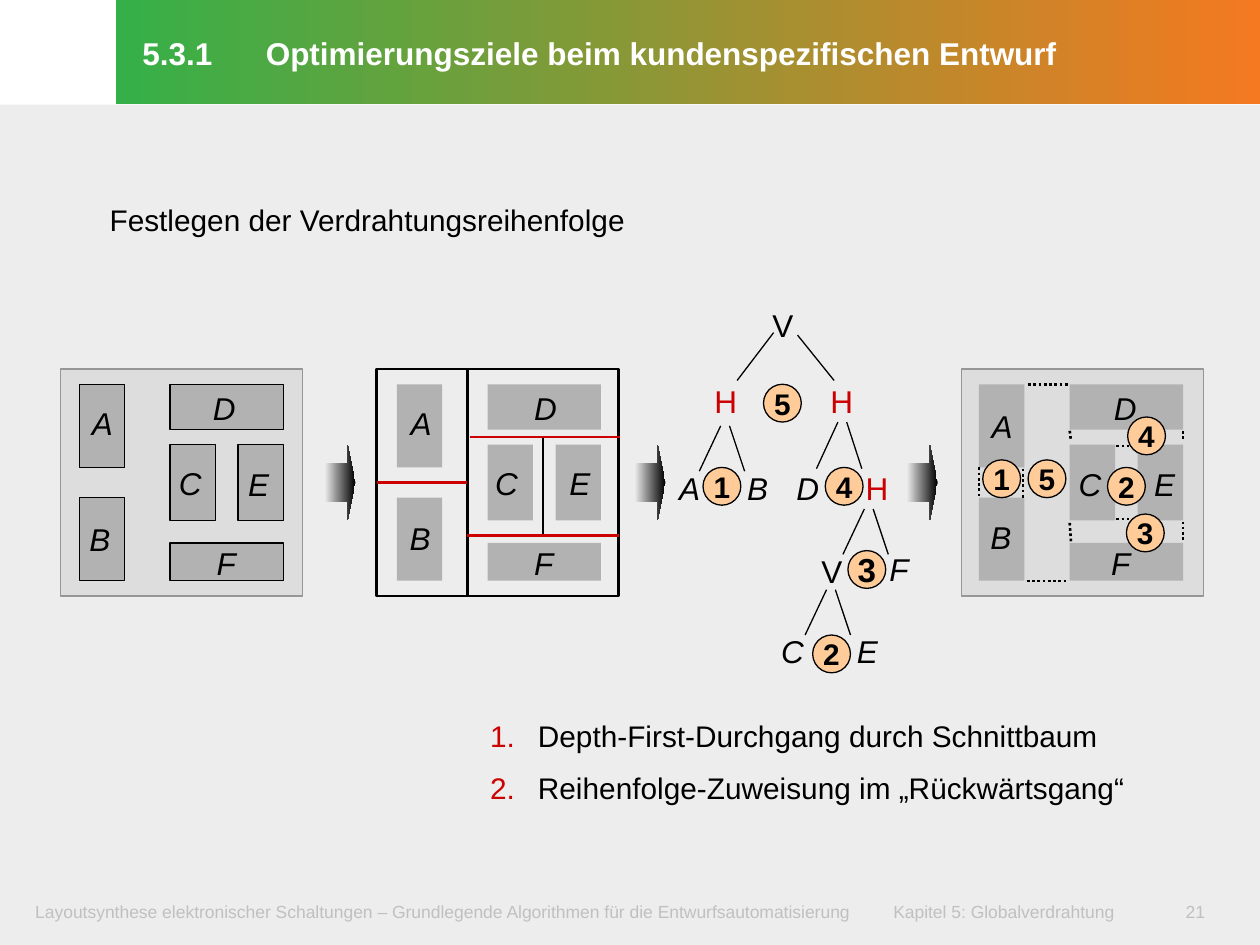
from lxml.etree import SubElement
from pptx import Presentation
from pptx.dml.color import RGBColor
from pptx.enum.dml import MSO_LINE_DASH_STYLE as Dash
from pptx.enum.shapes import MSO_CONNECTOR as Connector, MSO_SHAPE as Shape
from pptx.enum.text import MSO_ANCHOR as Anchor, PP_ALIGN as Align
from pptx.oxml.ns import qn
from pptx.util import Inches, Pt

COLOURS = {
    "page": "EDEDED", "panel": "DDDDDD", "panel_edge": "969696", "cell": "B2B2B2",
    "black": "000000", "white": "FFFFFF", "red": "CC0000", "circle": "FFCC99",
    "footer": "C0C0C0", "green": "35B048", "orange": "F47920", "pale": "EAEAEA",
}
COLOURS = {name: RGBColor.from_string(value) for name, value in COLOURS.items()}

deck = Presentation()
deck.slide_width, deck.slide_height = Inches(10), Inches(7.5)
page = deck.slides.add_slide(deck.slide_layouts[6])


def add_block(kind, place, fill=None, edge=None, weight=0.75):
    """Add a preset shape; a pair of fill colours makes a left-to-right gradient."""
    block = page.shapes.add_shape(kind, *map(Inches, place))
    block.shadow.inherit = False
    if isinstance(fill, tuple):
        block.fill.gradient()
        block.fill.gradient_angle = 0
        for stop, position, name in zip(block.fill.gradient_stops, (0, 1), fill):
            stop.position, stop.color.rgb = position, COLOURS[name]
    elif fill:
        block.fill.solid()
        block.fill.fore_color.rgb = COLOURS[fill]
    else:
        block.fill.background()
    if edge:
        block.line.color.rgb = COLOURS[edge]
        block.line.width = Pt(weight)
    else:
        block.line.fill.background()
    return block


def write(box, text, size, colour="black", margins=(0.11, 0.05, 0.11, 0.05),
          wrap=False, anchor=Anchor.TOP, align=Align.LEFT, tab=None, **font):
    """Fill the first paragraph of a box and return it."""
    frame = box.text_frame
    layout = {"word_wrap": wrap, "vertical_anchor": anchor}
    sides = ("margin_left", "margin_top", "margin_right", "margin_bottom")
    layout.update(zip(sides, map(Inches, margins)))
    for name, value in layout.items():
        setattr(frame, name, value)
    para = frame.paragraphs[0]
    para.alignment = align
    if tab:
        tabs = SubElement(para._p.get_or_add_pPr(), qn("a:tabLst"))
        SubElement(tabs, qn("a:tab"), pos=str(Inches(tab)), algn="l")
    span = para.add_run()
    span.text = text
    for name, value in {"name": "Arial", "size": Pt(size), **font}.items():
        setattr(span.font, name, value)
    span.font.color.rgb = COLOURS[colour]
    return para


# Page background, footer and title bar
add_block(Shape.RECTANGLE, (0, 0.83, 10, 6.67), "page")
footers = [
    (0.16, 9.1, "Layoutsynthese elektronischer Schaltungen – Grundlegende Algorithmen "
                "für die Entwurfsautomatisierung\tKapitel 5: Globalverdrahtung"),
    (9.29, 0.59, "21"),
]
for left, width, text in footers:
    box = page.shapes.add_textbox(*map(Inches, (left, 7.09, width, 0.32)))
    write(box, text, 10, "footer", (0.12, 0.06, 0.12, 0.06), wrap=True, tab=6.81)

bar = add_block(Shape.RECTANGLE, (0.92, 0, 9.08, 0.83), ("green", "orange"))
title = write(bar, "5.3.1\tOptimierungsziele beim kundenspezifischen Entwurf", 18, "white",
              (0.21, 0.05, 0.1, 0.07), wrap=True, anchor=Anchor.MIDDLE, tab=0.98, bold=True)
title.line_spacing = Pt(23.5)

box = page.shapes.add_textbox(*map(Inches, (0.66, 1.55, 4.41, 0.41)))
write(box, "Festlegen der Verdrahtungsreihenfolge", 17, margins=(0.21, 0.05, 0.1, 0.07))

# Three floorplans with the same six cells
for left in (0.48, 7.63):
    add_block(Shape.RECTANGLE, (left, 2.93, 1.92, 1.8), "panel", "panel_edge")
cells = [  # offset from the floorplan, top, width, height
    (0, 3.05, 0.36, 0.66), (0, 3.95, 0.36, 0.66),
    (0.72, 3.53, 0.36, 0.6), (1.26, 3.53, 0.36, 0.6),
    (0.72, 3.05, 0.9, 0.36), (0.72, 4.31, 0.9, 0.3),
]
for start, edge in ((0.63, "black"), (3.15, None), (7.77, None)):
    for offset, *rest in cells:
        add_block(Shape.RECTANGLE, (start + offset, *rest), "cell", edge)

# Regions of the cut floorplan
add_block(Shape.RECTANGLE, (3.71, 2.93, 1.2, 1.8), None, "black", 1.25)
add_block(Shape.RECTANGLE, (2.99, 2.93, 0.72, 1.8), None, "black", 1.5)

# Cut lines, tree branches and dotted channels
line_groups = [
    ("black", 1.25, None, [(4.31, 3.47, 4.31, 4.25)]),
    ("red", 1.25, None, [(3.73, 3.47, 4.92, 3.47), (3.71, 4.25, 4.91, 4.25)]),
    ("red", 1.5, None, [(2.99, 3.83, 3.71, 3.83)]),
    ("black", 0.75, None, [
        (6.14, 2.64, 5.85, 3.02), (6.33, 2.66, 6.62, 3.02),
        (5.72, 3.38, 5.55, 3.74), (5.79, 3.38, 5.91, 3.74),
        (6.65, 3.35, 6.48, 3.72), (6.72, 3.35, 6.84, 3.72),
        (6.86, 4.04, 6.69, 4.4), (6.93, 4.04, 7.05, 4.4),
        (6.56, 4.68, 6.39, 5.04), (6.63, 4.68, 6.75, 5.04)]),
    ("black", 1.5, Dash.ROUND_DOT, [
        (7.77, 3.71, 7.77, 3.95), (8.12, 3.72, 8.12, 3.96),
        (8.49, 4.15, 8.5, 4.3), (9.39, 4.14, 9.39, 4.29),
        (8.49, 3.42, 8.5, 3.5), (9.39, 3.42, 9.39, 3.5),
        (8.15, 4.61, 8.47, 4.61), (8.16, 3.05, 8.48, 3.05),
        (8.86, 3.54, 9.04, 3.54), (8.86, 4.12, 9.04, 4.12)]),
]
for colour, weight, dash, ends in line_groups:
    for end in ends:
        line = page.shapes.add_connector(Connector.STRAIGHT, *map(Inches, end))
        line.line.color.rgb = COLOURS[colour]
        line.line.width = Pt(weight)
        if dash:
            line.line.dash_style = dash
        SubElement(line._element.spPr, qn("a:effectLst"))

# Cell letters (italic) and cut letters of the tree
letters = [
    ("A", 0.62, 3.16), ("B", 0.6, 4.08), ("C", 1.31, 3.63),
    ("D", 1.58, 3.04), ("E", 1.86, 3.64), ("F", 1.61, 4.27),
    ("A", 3.15, 3.16), ("B", 3.14, 4.07), ("C", 3.82, 3.63),
    ("D", 4.13, 3.04), ("E", 4.41, 3.63), ("F", 4.13, 4.27),
    ("A", 7.76, 3.18), ("B", 7.75, 4.06), ("C", 8.45, 3.64),
    ("D", 8.73, 3.04), ("E", 9.05, 3.64), ("F", 8.71, 4.27),
    ("A", 5.28, 3.67), ("B", 5.82, 3.67), ("C", 6.09, 4.97),
    ("D", 6.21, 3.67), ("E", 6.69, 4.97), ("F", 6.95, 4.32),
    ("V", 6.02, 2.38), ("V", 6.41, 4.33),
    ("H", 5.56, 2.98), ("H", 6.48, 2.98), ("H", 6.76, 3.67),
]
letter_widths = {"C": 0.39, "D": 0.39, "H": 0.39, "F": 0.36}
for letter, left, top in letters:
    width = letter_widths.get(letter, 0.38)
    box = page.shapes.add_textbox(*map(Inches, (left, top, width, 0.4)))
    write(box, letter, 18, "red" if letter == "H" else "black", italic=letter not in "HV")

# Arrows between the steps
for left in (2.58, 5.04, 7.2):
    arrow = add_block(Shape.RIGHT_ARROW, (left, 3.53, 0.24, 0.6), ("pale", "black"))
    arrow.adjustments[0], arrow.adjustments[1] = 0.5, 0.25

# Numbered circles on the tree and on the last floorplan
circles = [
    ("1", 5.58, 3.71, 17), ("2", 6.45, 5.04, 17), ("3", 6.73, 4.37, 19),
    ("4", 6.55, 3.71, 17), ("5", 6.06, 3.05, 17),
    ("4", 8.95, 3.31, 17), ("3", 8.94, 4.08, 17), ("2", 8.79, 3.71, 17),
    ("5", 8.16, 3.65, 17), ("1", 7.8, 3.65, 17),
]
for number, left, top, size in circles:
    circle = add_block(Shape.OVAL, (left, top, 0.3, 0.3), "circle", "black")
    write(circle, number, size, anchor=Anchor.MIDDLE, align=Align.CENTER, bold=True)

# Numbered steps
box = page.shapes.add_textbox(*map(Inches, (3.68, 5.64, 5.83, 0.9)))
write(box, "Depth-First-Durchgang durch Schnittbaum", 17,
      margins=(0.21, 0.05, 0.1, 0.05), wrap=True)
second = box.text_frame.add_paragraph()
second.text = "Reihenfolge-Zuweisung im „Rückwärtsgang“"
second.space_before = Pt(9)
for para in box.text_frame.paragraphs:
    para.line_spacing = 1.02
    properties = para._p.get_or_add_pPr()
    properties.set("marL", str(Inches(0.38)))
    properties.set("indent", str(Inches(-0.38)))
    bullet_colour = SubElement(properties, qn("a:buClr"))
    SubElement(bullet_colour, qn("a:srgbClr"), val=str(COLOURS["red"]))
    SubElement(properties, qn("a:buFont"), typeface="Arial")
    SubElement(properties, qn("a:buAutoNum"), type="arabicPeriod")
    for name, value in {"name": "Arial", "size": Pt(17)}.items():
        setattr(para.runs[0].font, name, value)
    para.runs[0].font.color.rgb = COLOURS["black"]

deck.save("out.pptx")
